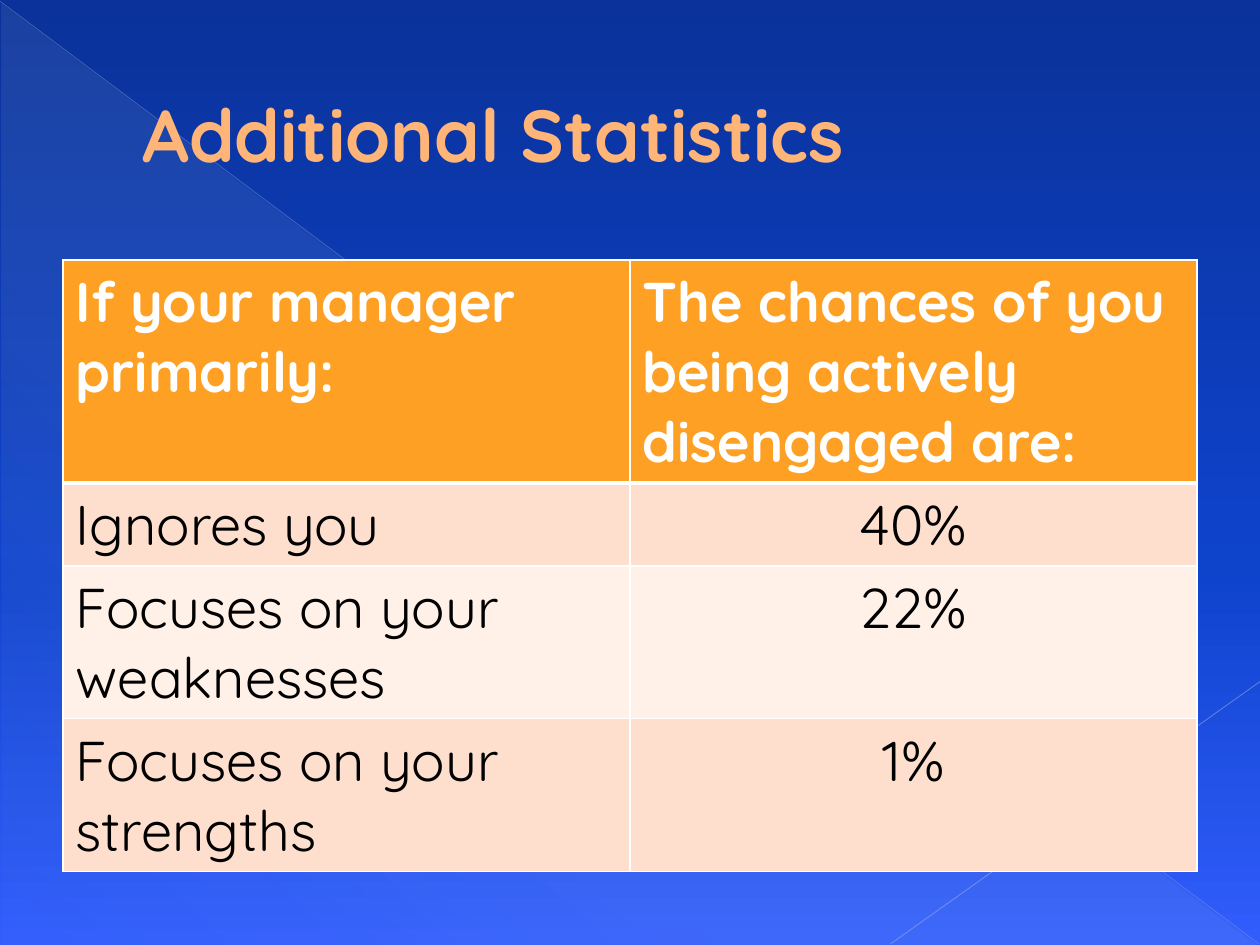
from lxml import etree
from pptx import Presentation
from pptx.dml.color import RGBColor
from pptx.enum.shapes import MSO_CONNECTOR, MSO_SHAPE
from pptx.enum.text import MSO_ANCHOR, PP_ALIGN
from pptx.oxml import parse_xml
from pptx.oxml.ns import qn
from pptx.util import Pt

LINE, TRI = MSO_CONNECTOR.STRAIGHT, MSO_SHAPE.RIGHT_TRIANGLE
LEFT, MID = PP_ALIGN.LEFT, PP_ALIGN.CENTER
CENTER = MSO_ANCHOR.MIDDLE
NS = "http://schemas.openxmlformats.org/drawingml/2006/main"

NAVY = RGBColor(0x0A, 0x32, 0x9A)
BLUE = RGBColor(0x0E, 0x43, 0xCC)
SKY = RGBColor(0x31, 0x5D, 0xFC)
MIST = RGBColor(0xCC, 0xDD, 0xEA)
HAZE = RGBColor(0xAD, 0xB6, 0xDC)
PALE = RGBColor(0xB7, 0xBE, 0xDF)
PEACH = RGBColor(0xFF, 0xB5, 0x77)
BROWN = RGBColor(0xAF, 0x6F, 0x18)
ORANGE = RGBColor(0xFD, 0xA0, 0x23)
BANDS = RGBColor(0xFE, 0xDF, 0xCD), RGBColor(0xFF, 0xF0, 0xE8)
WHITE = RGBColor(0xFF, 0xFF, 0xFF)
BLACK = RGBColor(0, 0, 0)

ROWS = [
    ("If your manager primarily:",
     "The chances of you being actively disengaged are:"),
    ("Ignores you", "40%"),
    ("Focuses on your weaknesses", "22%"),
    ("Focuses on your strengths", "1%"),
]
HEIGHTS = 126, 47, 87, 87


def solid(color):
    return f'<a:solidFill><a:srgbClr val="{color}"/></a:solidFill>'


def edge(tag, color, width):
    return parse_xml(f'<a:{tag} xmlns:a="{NS}" w="{int(Pt(width))}">'
                     f'{solid(color)}</a:{tag}>')


class Deck:
    font = "Quicksand"

    def __init__(self, wide, high):
        self.prs = Presentation()
        self.prs.slide_width, self.prs.slide_height = Pt(wide), Pt(high)
        self.slide = self.prs.slides.add_slide(self.prs.slide_layouts[5])
        self.shapes = self.slide.shapes

    def blend(self, fill, root, stops, angle):
        """Fill with (position, colour, opacity) stops, all in percent."""
        fill.solid()
        old = next(root.iter(qn("a:solidFill")))
        marks = "".join(
            f'<a:gs pos="{pos * 1000}"><a:srgbClr val="{color}">'
            f'<a:alpha val="{alpha * 1000}"/></a:srgbClr></a:gs>'
            for pos, color, alpha in stops)
        new = parse_xml(f'<a:gradFill xmlns:a="{NS}" rotWithShape="1">'
                        f'<a:gsLst>{marks}</a:gsLst>'
                        f'<a:lin ang="{angle * 60000}" scaled="0"/></a:gradFill>')
        old.getparent().replace(old, new)

    def back(self, stops, angle):
        self.blend(self.slide.background.fill, self.slide.element, stops, angle)

    def wedge(self, box, stops, angle):
        shape = self.shapes.add_shape(TRI, *map(Pt, box))
        shape.shadow.inherit = False
        self.blend(shape.fill, shape.element, stops, angle)
        shape.line.fill.background()

    def line(self, ends, color, width, alpha):
        line = self.shapes.add_connector(LINE, *map(Pt, ends))
        line.line.color.rgb, line.line.width = color, Pt(width)
        tone = next(line.element.iter(qn("a:srgbClr")))
        etree.SubElement(tone, qn("a:alpha"), val=str(alpha * 1000))
        etree.SubElement(line.element.spPr, qn("a:effectLst"))

    def style(self, par, size, color, bold, align=LEFT):
        par.alignment = align
        font = par.font
        font.name, font.size, font.bold = self.font, Pt(size), bold
        font.color.rgb = color

    def title(self, text, box, indent):
        title = self.shapes.title
        title.left, title.top, title.width, title.height = map(Pt, box)
        frame = title.text_frame
        frame.text, frame.word_wrap = text, True
        frame.vertical_anchor = CENTER
        par = frame.paragraphs[0]
        self.style(par, 42, PEACH, True)
        props = par._p.get_or_add_pPr()
        props.set("marL", str(int(Pt(indent))))
        props.set("indent", "0")
        props.find(qn("a:defRPr")).insert(0, edge("ln", BROWN, 0.5))
        # Keep the title above the backdrop
        title.element.getparent().append(title.element)

    def cell(self, cell, text, fill, color, bold, align, base):
        cell.text = text
        self.style(cell.text_frame.paragraphs[0], 32, color, bold, align)
        cell.fill.solid()
        cell.fill.fore_color.rgb = fill
        sides = {"lnL": 1, "lnR": 1, "lnT": 1, "lnB": base}
        props = cell._tc.get_or_add_tcPr()
        for at, (tag, width) in enumerate(sides.items()):
            props.insert(at, edge(tag, WHITE, width))

    def table(self, rows, heights, left, top, width):
        table = self.shapes.add_table(
            len(rows), len(rows[0]), Pt(left), Pt(top),
            Pt(width), Pt(sum(heights))).table
        for r, (row, high) in enumerate(zip(rows, heights)):
            table.rows[r].height = Pt(high)
            for c, text in enumerate(row):
                if r == 0:
                    look = ORANGE, WHITE, True, LEFT, 3
                else:
                    look = (BANDS[(r - 1) % 2], BLACK, False,
                            MID if c else LEFT, 1)
                self.cell(table.cell(r, c), text, *look)


def main():
    deck = Deck(720, 540)

    # Backdrop
    deck.back([(0, NAVY, 100), (60, BLUE, 100), (100, SKY, 100)], 90)
    deck.wedge((0.7, 1.4, 718.6, 538.6),
               [(0, MIST, 10), (70, MIST, 8), (100, MIST, 1)], 133)
    deck.line((0, 0.7, 719.3, 539.3), HAZE, 0.39, 35)
    deck.line((720, 389.5, 509, 539.3), PALE, 0.47, 45)

    # Title and table
    deck.title("Additional Statistics", (36, 21, 648, 110), 38)
    deck.table(ROWS, HEIGHTS, 36, 148.5, 648)

    deck.prs.save("out.pptx")


if __name__ == "__main__":
    main()
